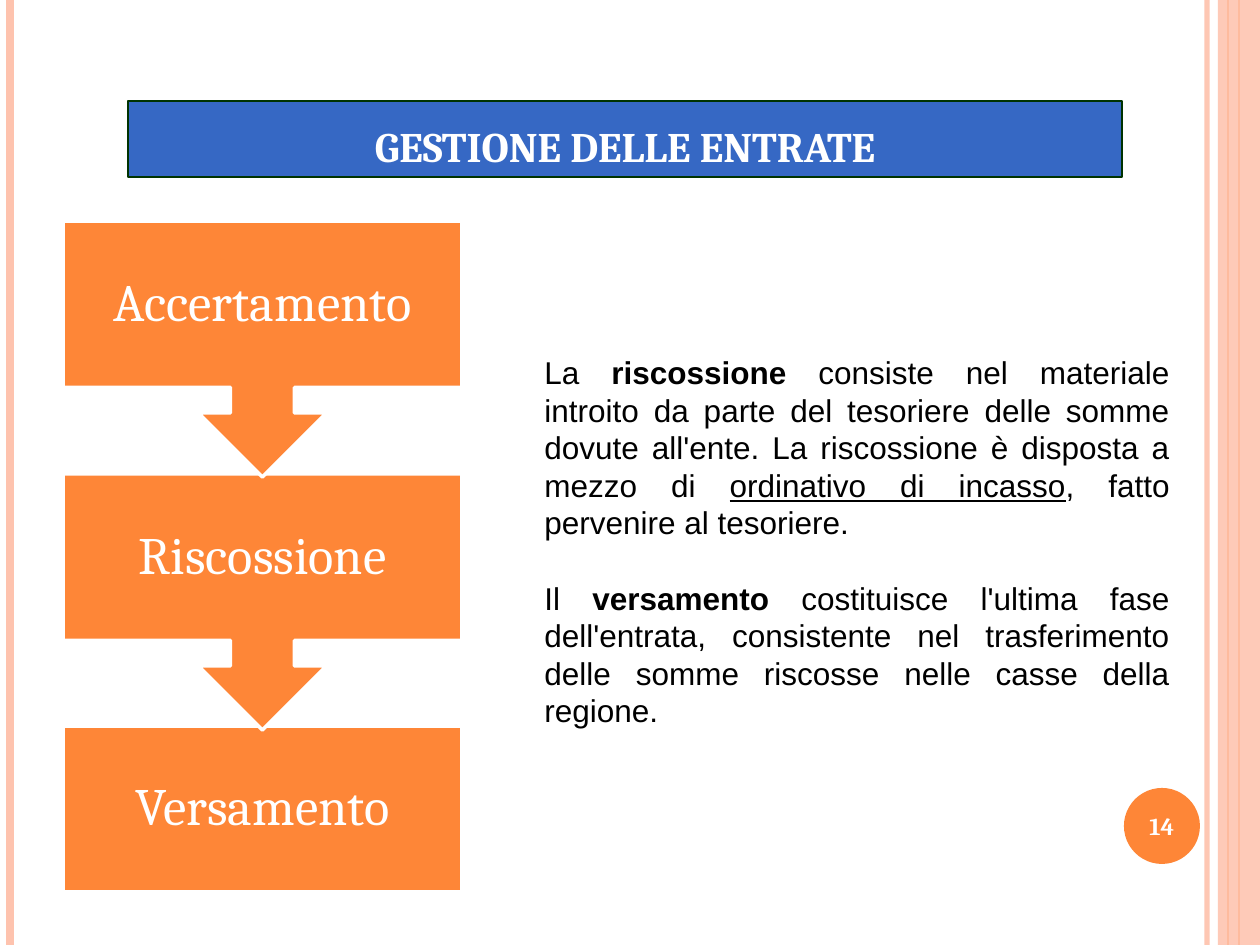
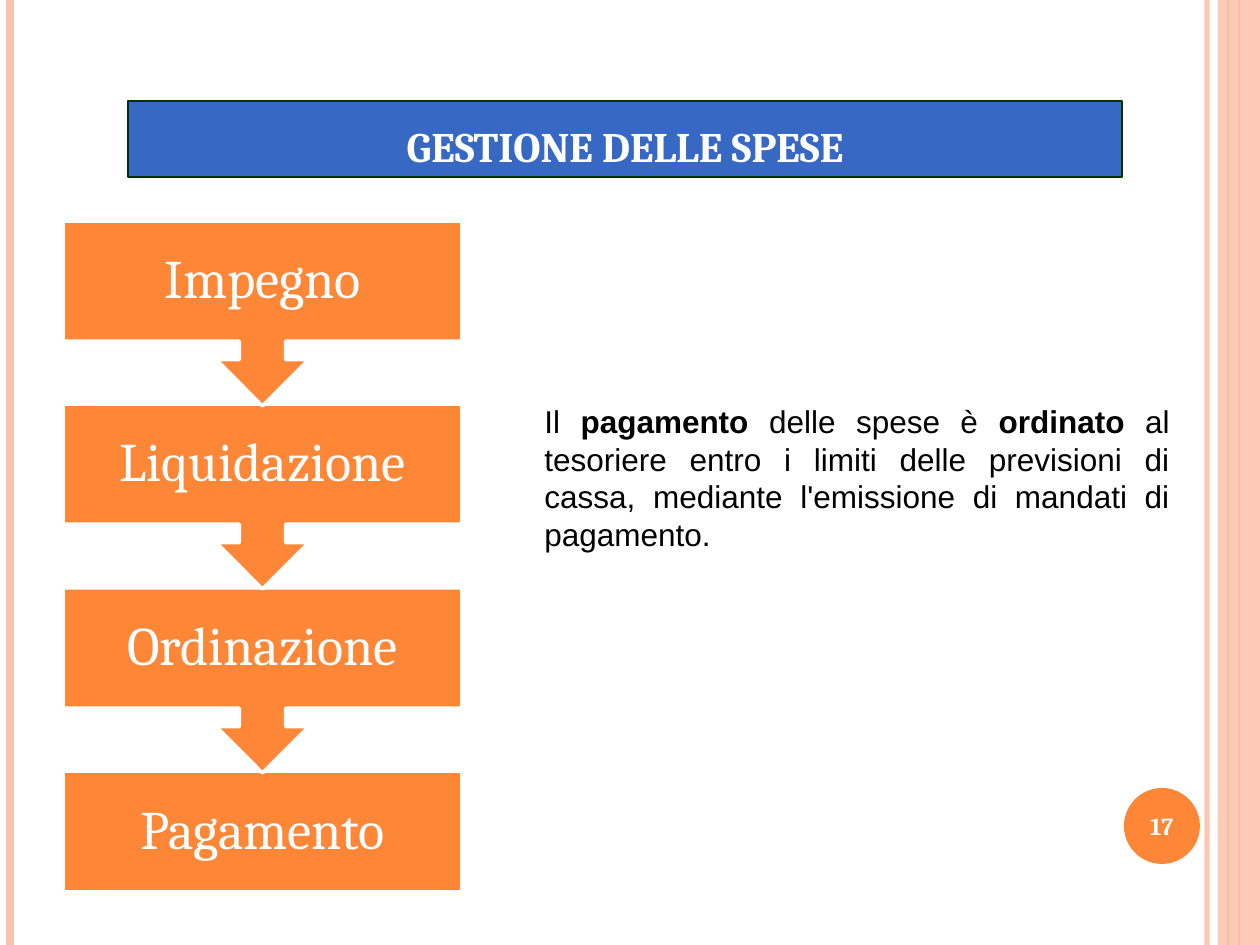
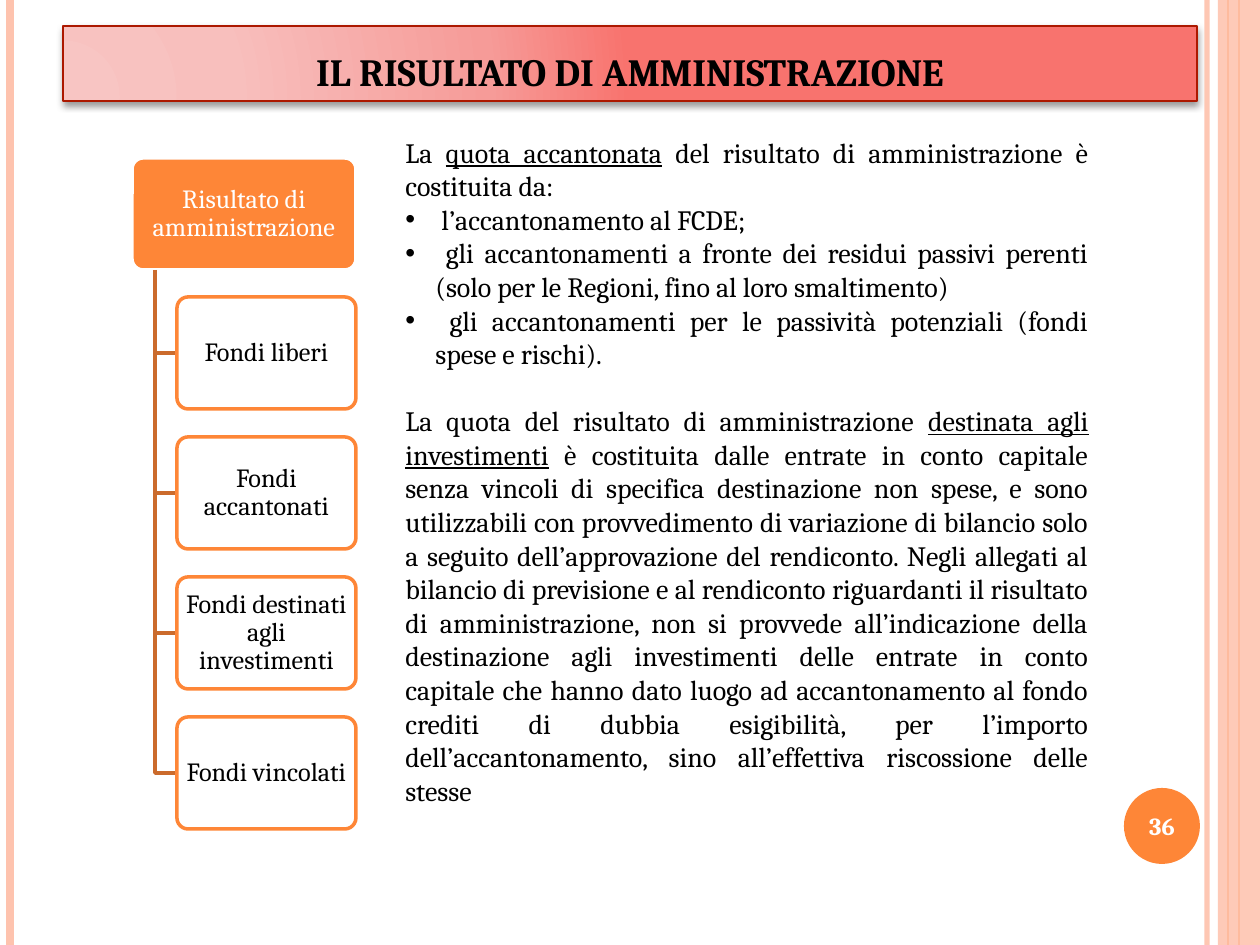
"""Build three slides on the management of revenue, expenditure and the final result."""
from lxml.etree import SubElement
from pptx import Presentation
from pptx.dml.color import RGBColor
from pptx.enum.shapes import MSO_CONNECTOR, MSO_SHAPE
from pptx.enum.text import MSO_ANCHOR, MSO_AUTO_SIZE, PP_ALIGN
from pptx.oxml import parse_xml
from pptx.oxml.ns import nsdecls, qn
from pptx.util import Inches, Pt

PX = 914400 // 126
ORANGE, PEACH, RUST = "FE8637", "FEC3AE", "CB6B2C"
BLUE, GREEN, RED = "3668C4", "003300", "AC1800"
WHITE, BLACK = "FFFFFF", "000000"
GRADIENT_STOPS = [(0, "F8C5C3"), (30, "F8BFBD"), (75, "F69B98"), (100, "F8736E")]
BAND_LINES = [(1207, PEACH, 3, 93), (10, PEACH, 4.5, 100),
              (1239, ORANGE, 1.5, 100), (1228, ORANGE, 0.75, 100)]


def add_block(page, kind, place, fill, line=None, weight=2):
    """Add a flat preset shape at a place given in px."""
    block = page.shapes.add_shape(kind, *[length * PX for length in place])
    block.shadow.inherit = False
    block.fill.solid()
    block.fill.fore_color.rgb = RGBColor.from_string(fill)
    if line:
        block.line.color.rgb = RGBColor.from_string(line)
        block.line.width = Pt(weight)
    else:
        block.line.fill.background()
    return block


def write(shape, paragraphs, size, color, font="Cambria", align=PP_ALIGN.CENTER,
          anchor=MSO_ANCHOR.MIDDLE, inset=None, spacing=None):
    """Fill a shape with paragraphs, each a list of (text, marks) runs."""
    frame = shape.text_frame
    frame.word_wrap = True
    frame.auto_size = MSO_AUTO_SIZE.NONE
    frame.vertical_anchor = anchor
    if inset is not None:
        frame.margin_left = frame.margin_right = inset * PX
        frame.margin_top = frame.margin_bottom = inset * PX
    for number, runs in enumerate(paragraphs):
        para = frame.add_paragraph() if number else frame.paragraphs[0]
        para.alignment = align
        if spacing:
            para.line_spacing = spacing
        for text, marks in runs:
            span = para.add_run()
            span.text = text
            span.font.name = font
            span.font.size = Pt(size)
            span.font.bold = "b" in marks
            span.font.underline = "u" in marks
            span.font.color.rgb = RGBColor.from_string(color)
    return frame.paragraphs


deck = Presentation()
deck.slide_width, deck.slide_height = Inches(10), Inches(7.5)

pages = []
for title, number, place, size, color in [
    ("GESTIONE DELLE ENTRATE", "14", (128, 101, 994, 76), 24, WHITE),
    ("GESTIONE DELLE SPESE", "17", (128, 101, 994, 76), 24, WHITE),
    ("IL RISULTATO DI AMMINISTRAZIONE", "36", (63, 26, 1134, 75), 22, BLACK),
]:
    page = deck.slides.add_slide(deck.slide_layouts[5])
    pages.append(page)
    for x, line_color, weight, opacity in BAND_LINES:
        line = page.shapes.add_connector(MSO_CONNECTOR.STRAIGHT, x * PX, 0, x * PX, 945 * PX)
        line.line.color.rgb = RGBColor.from_string(line_color)
        line.line.width = Pt(weight)
        properties = line.element.spPr
        SubElement(properties, qn("a:effectLst"))
        if opacity < 100:
            for tint in properties.iter(qn("a:srgbClr")):
                SubElement(tint, qn("a:alpha")).set("val", str(opacity * 1000))
    band = add_block(page, MSO_SHAPE.RECTANGLE, (1218, 0, 42, 945), PEACH)
    for tint in band.element.spPr.iter(qn("a:srgbClr")):
        SubElement(tint, qn("a:alpha")).set("val", "87000")
    badge = add_block(page, MSO_SHAPE.OVAL, (1124, 788, 76, 76), ORANGE)
    write(badge, [[(number, "b")]], 14, WHITE, inset=0)
    heading = page.shapes.title
    heading.left, heading.top, heading.width, heading.height = [length * PX for length in place]
    write(heading, [[(title, "b")]], size, color, anchor=MSO_ANCHOR.BOTTOM)

for page in pages[:2]:
    heading = page.shapes.title
    heading.fill.solid()
    heading.fill.fore_color.rgb = RGBColor.from_string(BLUE)
    heading.line.color.rgb = RGBColor.from_string(GREEN)
    heading.line.width = Pt(0.75)

heading = pages[2].shapes.title
stops = "".join(f'<a:gs pos="{position * 1000}"><a:srgbClr val="{color}"/></a:gs>'
                for position, color in GRADIENT_STOPS)
heading.element.spPr.append(parse_xml(
    f'<a:gradFill {nsdecls("a")}><a:gsLst>{stops}</a:gsLst><a:path path="circle">'
    '<a:fillToRect l="5000" t="100000" r="120000" b="10000"/></a:path></a:gradFill>'))
heading.line.color.rgb = RGBColor.from_string(RED)
heading.line.width = Pt(1)
heading.element.spPr.append(parse_xml(
    f'<a:effectLst {nsdecls("a")}><a:outerShdw blurRad="50800" dist="25400" dir="5400000" '
    'rotWithShape="0"><a:srgbClr val="000000"><a:alpha val="40000"/></a:srgbClr>'
    '</a:outerShdw></a:effectLst>'))

revenue_text = [
    [("La ", ""), ("riscossione", "b"),
     (" consiste nel materiale introito da parte del tesoriere delle somme dovute all'ente. "
      "La riscossione è disposta a mezzo di ", ""),
     ("ordinativo di incasso", "u"), (", fatto pervenire al tesoriere.", "")],
    [("Il ", ""), ("versamento ", "b"),
     ("costituisce l'ultima fase dell'entrata, consistente nel trasferimento delle somme "
      "riscosse nelle casse della regione.", "")],
]
spending_text = [
    [("Il ", ""), ("pagamento", "b"), (" delle spese è ", ""), ("ordinato", "b"),
     (" al tesoriere entro i limiti delle previsioni di cassa, mediante l'emissione di "
      "mandati di pagamento.", "")],
]
FLOW_TOP, FLOW_BOTTOM = 221, 892
for page, steps, box_height, callout_height, size, text, text_top, text_height in [
    (pages[0], ["Accertamento", "Riscossione", "Versamento"],
     166, 256, 30, revenue_text, 347, 394),
    (pages[1], ["Impegno", "Liquidazione", "Ordinazione", "Pagamento"],
     121, 185, 31, spending_text, 396, 165),
]:
    pitch = (FLOW_BOTTOM - FLOW_TOP - box_height) / (len(steps) - 1)
    for index, step in reversed(list(enumerate(steps))):
        last = index == len(steps) - 1
        kind = MSO_SHAPE.RECTANGLE if last else MSO_SHAPE.DOWN_ARROW_CALLOUT
        height = box_height if last else callout_height
        top = round(FLOW_TOP + index * pitch)
        block = add_block(page, kind, (63, top, 399, height), ORANGE, WHITE)
        write(block, [[(step, "")]], size, WHITE, inset=29, spacing=0.9)
    box = page.shapes.add_textbox(532 * PX, text_top * PX, 650 * PX, text_height * PX)
    paras = write(box, text, 18, BLACK, "Arial", PP_ALIGN.JUSTIFY, MSO_ANCHOR.TOP,
                  spacing=Pt(21.5))
    for para in paras[1:]:
        para.space_before = Pt(21.5)

page = pages[2]
root = add_block(page, MSO_SHAPE.ROUNDED_RECTANGLE, (132, 158, 224, 112), ORANGE, WHITE)
root.adjustments[0] = 0.1
write(root, [[("Risultato di amministrazione", "")]], 15, WHITE, inset=4, spacing=0.9)
funds = ["Fondi liberi", "Fondi accantonati", "Fondi destinati agli investimenti",
         "Fondi vincolati"]
for index, fund in enumerate(funds):
    top = 297 + index * 140
    middle = top + 56
    builder = page.shapes.build_freeform(155, 270, scale=PX)
    builder.add_line_segments([(155, middle), (177, middle)], close=False)
    branch = builder.convert_to_shape()
    branch.shadow.inherit = False
    branch.fill.background()
    branch.line.color.rgb = RGBColor.from_string(RUST)
    branch.line.width = Pt(2)
    block = add_block(page, MSO_SHAPE.ROUNDED_RECTANGLE, (177, top, 179, 112), WHITE, ORANGE)
    block.adjustments[0] = 0.1
    write(block, [[(fund, "")]], 15, BLACK, inset=4, spacing=0.9)

result_text = [
    [("La ", ""), ("quota accantonata", "u"),
     (" del risultato di amministrazione è costituita da:", "")],
    [(" l’accantonamento al FCDE;", "")],
    [(" gli accantonamenti a fronte dei residui passivi perenti (solo per le Regioni, "
      "fino al loro smaltimento)", "")],
    [(" gli accantonamenti per le passività potenziali (fondi spese e rischi).", "")],
    [("La quota del risultato di amministrazione ", ""), ("destinata agli investimenti", "u"),
     (" è costituita dalle entrate in conto capitale senza vincoli di specifica destinazione "
      "non spese, e sono utilizzabili con provvedimento di variazione di bilancio solo a "
      "seguito dell’approvazione del rendiconto. Negli allegati al bilancio di previsione e "
      "al rendiconto riguardanti il risultato di amministrazione, non si provvede "
      "all’indicazione della destinazione agli investimenti delle entrate in conto capitale "
      "che hanno dato luogo ad accantonamento al fondo crediti di dubbia esigibilità, per "
      "l’importo dell’accantonamento, sino all’effettiva riscossione delle stesse", "")],
]
box = page.shapes.add_textbox(393 * PX, 129 * PX, 708 * PX, 751 * PX)
paras = write(box, result_text, 16, BLACK, align=PP_ALIGN.JUSTIFY, anchor=MSO_ANCHOR.TOP,
              spacing=Pt(19.2))
paras[-1].space_before = Pt(19.2)
for para in paras[1:4]:
    properties = para._p.get_or_add_pPr()
    properties.set("marL", str(30 * PX))
    properties.set("indent", str(-30 * PX))
    SubElement(properties, qn("a:buFont")).set("typeface", "Arial")
    SubElement(properties, qn("a:buChar")).set("char", "•")

deck.save("out.pptx")
